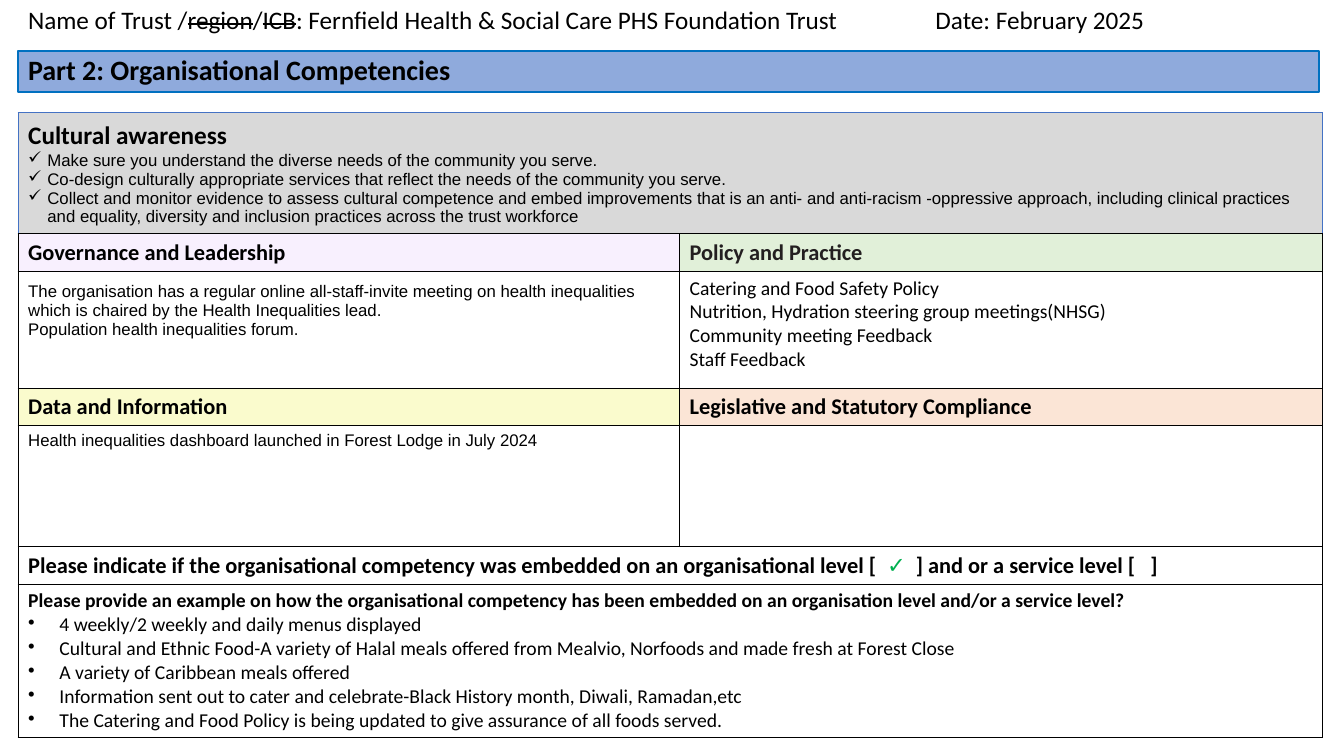
"""Build the organisational competencies slide with its evidence table."""
from lxml import etree
from pptx import Presentation
from pptx.dml.color import RGBColor
from pptx.enum.shapes import MSO_SHAPE
from pptx.enum.text import MSO_ANCHOR, PP_ALIGN
from pptx.oxml.ns import qn
from pptx.util import Inches, Pt

RECTANGLE = MSO_SHAPE.RECTANGLE
MIDDLE, TOP = MSO_ANCHOR.MIDDLE, MSO_ANCHOR.TOP
LEFT = PP_ALIGN.LEFT

THEME = {
    "black": "000000", "white": "FFFFFF", "ink": "231F20", "tick": "00B050",
    "banner": "8FAADC", "banner_line": "0070C0", "blue_line": "4472C4",
    "grey": "D9D9D9", "lilac": "F8F0FE", "green": "E1F0D9",
    "yellow": "FAFBCD", "peach": "FBE5D6",
    "border_width": 1, "banner_width": 1.25,
    "styles": {
        "trust": ("Calibri", 18, False),
        "banner": ("Calibri", 20, True),
        "title": ("Calibri", 18, True),
        "heading": ("Calibri", 16, True),
        "question": ("Calibri", 14, True),
        "body": ("Calibri", 14, False),
        "note": ("Arial", 12, False),
        "check": ("Arial", 12, False),
        "bullet": ("Calibri", 14, False),
    },
    "bullets": {"check": ("✓", 0.19), "bullet": ("•", 0.31)},
}

TRUST_LINE = [
    ("Name of Trust /", False), ("region", True), ("/", False), ("ICB", True),
    (": Fernfield Health & Social Care PHS Foundation Trust\tDate: February 2025", False),
]
BANNER = "Part 2: Organisational Competencies"
AWARENESS = [
    ("title", "Cultural awareness"),
    ("check", "Make sure you understand the diverse needs of the community you serve."),
    ("check", "Co-design culturally appropriate services that reflect the needs of the community you serve."),
    ("check", "Collect and monitor evidence to assess cultural competence and embed improvements that is an "
              "anti- and anti-racism -oppressive approach, including clinical practices and equality, "
              "diversity and inclusion practices across the trust workforce"),
]
GOVERNANCE = [
    ("note", "The organisation has a regular online all-staff-invite meeting on health inequalities "
             "which is chaired by the Health Inequalities lead."),
    ("note", "Population health inequalities forum."),
]
POLICY = [
    ("body", "Catering and Food Safety Policy"),
    ("body", "Nutrition, Hydration steering group meetings(NHSG)"),
    ("body", "Community meeting Feedback"),
    ("body", "Staff Feedback"),
]
DATA = [("note", "Health inequalities dashboard launched in Forest Lodge in July 2024")]
LEVEL = [
    ("Please indicate if the organisational competency was embedded on an organisational level [  ", "black"),
    ("✓", "tick"),
    ("  ] and or a service level [   ]", "black"),
]
EXAMPLES = [
    ("question", "Please provide an example on how the organisational competency has been embedded "
                 "on an organisation level and/or a service level?"),
    ("bullet", "4 weekly/2 weekly and daily menus displayed"),
    ("bullet", "Cultural and Ethnic Food-A variety of Halal meals offered from Mealvio, Norfoods "
               "and made fresh at Forest Close"),
    ("bullet", "A variety of Caribbean meals offered"),
    ("bullet", "Information sent out to cater and celebrate-Black History month, Diwali, Ramadan,etc"),
    ("bullet", "The Catering and Food Policy is being updated to give assurance of all foods served."),
]
ROWS = [
    (1.2, [(AWARENESS, "grey", "black")]),
    (0.37, [([("heading", "Governance and Leadership")], "lilac", "black"),
            ([("heading", "Policy and Practice")], "green", "ink")]),
    (1.16, [(GOVERNANCE, "white", "black"), (POLICY, "white", "black")]),
    (0.37, [([("heading", "Data and Information")], "yellow", "black"),
            ([("heading", "Legislative and Statutory Compliance")], "peach", "black")]),
    (1.2, [(DATA, "white", "black"), ([], "white", "black")]),
    (0.37, [([("heading", LEVEL)], "white", "black")]),
    (1.51, [(EXAMPLES, "white", "black")]),
]
COLUMNS = [6.56, 6.38]
MIDDLE_ROWS = (0, 1)
GOVERNANCE_CELL = (2, 0)
MARGIN = 0.18


def color(name):
    return RGBColor.from_string(THEME[name])


def format_run(run, style, color_name="black"):
    run.font.name, size, run.font.bold = THEME["styles"][style]
    run.font.size = Pt(size)
    run.font.color.rgb = color(color_name)


def add_bullet(paragraph, style):
    symbol, indent = THEME["bullets"][style]
    properties = paragraph._p.get_or_add_pPr()
    properties.set("marL", str(Inches(indent)))
    properties.set("indent", str(-Inches(indent)))
    etree.SubElement(properties, qn("a:buChar")).set("char", symbol)


def write_paragraphs(text_frame, items, color_name):
    for index, (style, content) in enumerate(items):
        paragraph = text_frame.add_paragraph() if index else text_frame.paragraphs[0]
        paragraph.alignment = LEFT
        if style in THEME["bullets"]:
            add_bullet(paragraph, style)
        pieces = [(content, color_name)] if isinstance(content, str) else content
        for text, piece_color in pieces:
            run = paragraph.add_run()
            run.text = text
            format_run(run, style, piece_color)


def set_borders(cell, colors):
    properties = cell._tc.get_or_add_tcPr()
    for index, (side, name) in enumerate(zip("LRTB", colors)):
        line = etree.Element(qn(f"a:ln{side}"), w=str(Pt(THEME["border_width"])))
        fill = etree.SubElement(line, qn("a:solidFill"))
        etree.SubElement(fill, qn("a:srgbClr")).set("val", THEME[name])
        properties.insert(index, line)


def add_competency_table(slide):
    heights = [height for height, _ in ROWS]
    table = slide.shapes.add_table(
        len(ROWS), len(COLUMNS), Inches(MARGIN), Inches(1.12),
        Inches(sum(COLUMNS)), Inches(sum(heights))).table
    table.first_row = table.horz_banding = False
    for column, width in zip(table.columns, COLUMNS):
        column.width = Inches(width)
    for row_index, (height, cells) in enumerate(ROWS):
        table.rows[row_index].height = Inches(height)
        side = "black" if row_index else "blue_line"
        for column_index in range(len(COLUMNS)):
            cell = table.cell(row_index, column_index)
            fill_name = cells[min(column_index, len(cells) - 1)][1]
            cell.fill.solid()
            cell.fill.fore_color.rgb = color(fill_name)
            set_borders(cell, (side, side, side, "black"))
        if len(cells) == 1:
            table.cell(row_index, 0).merge(table.cell(row_index, 1))
        for column_index, (items, _, color_name) in enumerate(cells):
            cell = table.cell(row_index, column_index)
            cell.vertical_anchor = MIDDLE if row_index in MIDDLE_ROWS else TOP
            write_paragraphs(cell.text_frame, items, color_name)
    table.cell(*GOVERNANCE_CELL).margin_top = Inches(0.11)


def add_banner(slide):
    banner = slide.shapes.add_shape(RECTANGLE, Inches(MARGIN), Inches(0.51), Inches(12.9), Inches(0.4))
    banner.shadow.inherit = False
    banner.fill.solid()
    banner.fill.fore_color.rgb = color("banner")
    banner.line.color.rgb = color("banner_line")
    banner.line.width = Pt(THEME["banner_width"])
    text_frame = banner.text_frame
    text_frame.word_wrap = True
    text_frame.vertical_anchor = MIDDLE
    write_paragraphs(text_frame, [("banner", BANNER)], "black")
    text_frame.paragraphs[0].line_spacing = 0.9


def add_trust_line(slide):
    box = slide.shapes.add_textbox(Inches(MARGIN), Inches(0.03), Inches(12.15), Inches(0.36))
    box.text_frame.word_wrap = True
    paragraph = box.text_frame.paragraphs[0]
    paragraph.line_spacing = 0.9
    paragraph.space_before = Pt(10)
    tabs = etree.SubElement(paragraph._p.get_or_add_pPr(), qn("a:tabLst"))
    etree.SubElement(tabs, qn("a:tab"), pos=str(Inches(9)), algn="l")
    for text, struck in TRUST_LINE:
        run = paragraph.add_run()
        run.text = text
        format_run(run, "trust")
        if struck:
            run.font._element.set("strike", "sngStrike")


def main():
    presentation = Presentation()
    presentation.slide_width, presentation.slide_height = Inches(13.33), Inches(7.5)
    slide = presentation.slides.add_slide(presentation.slide_layouts[6])
    add_competency_table(slide)
    add_banner(slide)
    add_trust_line(slide)
    presentation.save("out.pptx")


if __name__ == "__main__":
    main()
